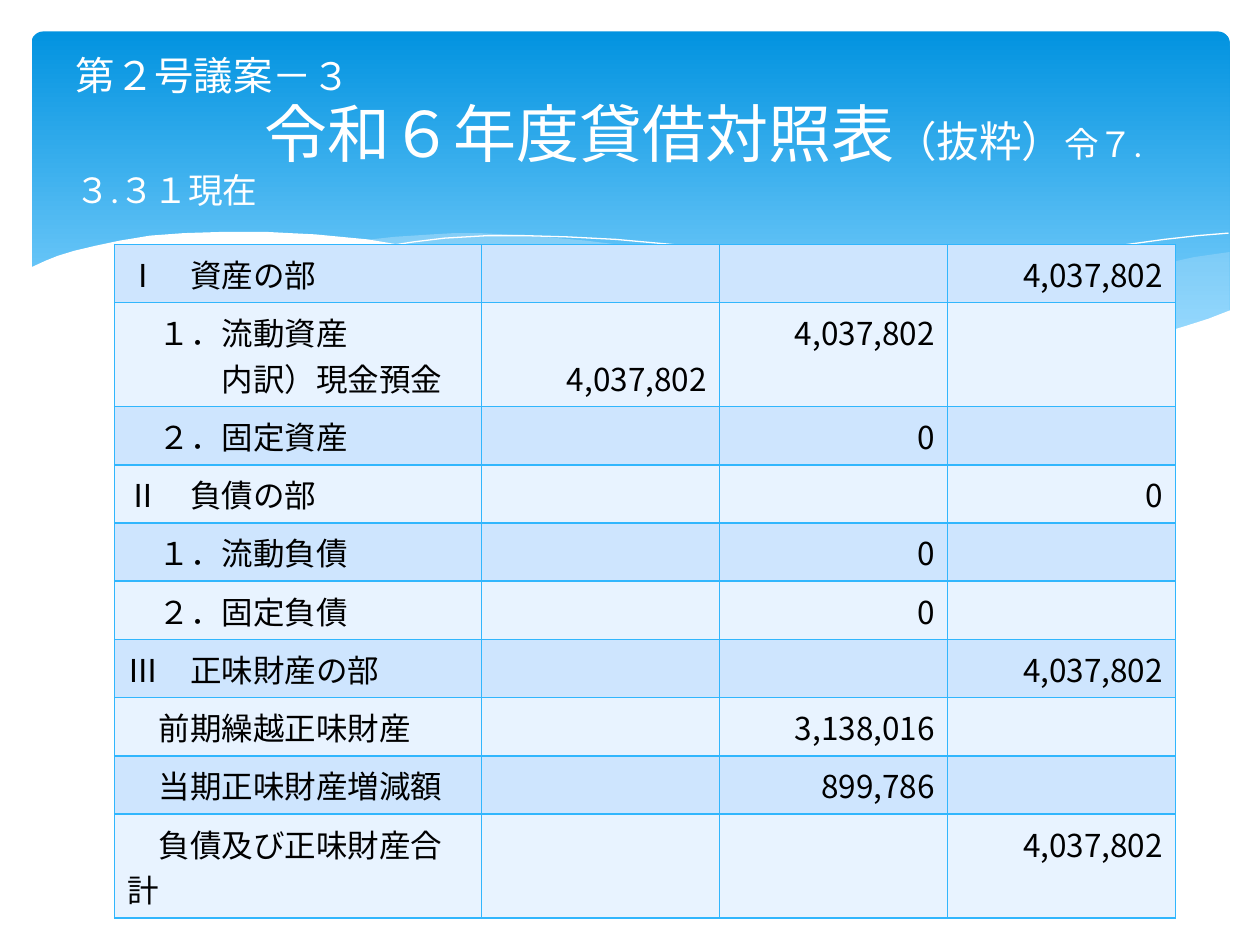
from lxml.etree import SubElement
from pptx import Presentation
from pptx.dml.color import RGBColor
from pptx.enum.shapes import MSO_SHAPE
from pptx.enum.text import MSO_ANCHOR, MSO_AUTO_SIZE, PP_ALIGN
from pptx.oxml.ns import qn
from pptx.util import Inches, Pt

HUES = {"top": "0293E0", "low": "83D3FE", "mist": "C6E7FC", "white": "FFFFFF",
        "black": "000000", "edge": "31B6FD", "odd": "CEE5FE", "even": "E8F3FF"}
CJK = "Noto Sans CJK JP"


def hue(name):
    return RGBColor.from_string(HUES[name])


def write(para, text, size, face, color):
    run = para.add_run()
    run.text = text
    run.font.size = Pt(size)
    run.font.name = face
    run.font.color.rgb = hue(color)
    props = run.font._element
    props.set("lang", "ja-JP")
    SubElement(props, qn("a:ea")).set("typeface", CJK)


deck = Presentation()
deck.slide_width, deck.slide_height = Inches(10), Inches(7.5)
slide = deck.slides.add_slide(deck.slide_layouts[5])
shapes = slide.shapes

# Blue banner
banner = shapes.add_shape(MSO_SHAPE.ROUNDED_RECTANGLE, Inches(0.25), Inches(0.25),
                          Inches(9.51), Inches(2.7))
banner.adjustments[0] = 0.034
banner.shadow.inherit = False
banner.line.fill.background()
banner.fill.gradient()
banner.fill.gradient_angle = 270
for stop, place, name in zip(banner.fill.gradient_stops, (0, 0.9), ("top", "low")):
    stop.position = place
    stop.color.rgb = hue(name)

# Waves: fill, opacity in percent, points in hundredths of an inch
# (no fill means a white hairline)
waves = [
    ("mist", 29, [
        (976, 200), (948, 204), (921, 210), (891, 216), (861, 223), (805, 237),
        (753, 248), (706, 257), (661, 265), (691, 269), (719, 272), (745, 275),
        (781, 277), (814, 278), (844, 277), (872, 274), (897, 270), (921, 265),
        (942, 259), (963, 252), (976, 247)]),
    ("mist", 40, [
        (893, 273), (866, 269), (807, 260), (741, 247), (668, 231), (629, 222),
        (598, 214), (569, 208), (541, 203), (514, 198), (489, 194), (465, 191),
        (442, 189), (420, 187), (399, 186), (380, 185), (361, 185), (344, 186),
        (313, 188), (286, 191), (323, 196), (362, 203), (404, 211), (449, 222),
        (530, 240), (601, 255), (650, 264), (695, 270), (736, 275), (773, 277),
        (807, 278), (838, 278), (867, 276), (893, 273)]),
    (None, 100, [
        (309, 195), (328, 192), (353, 189), (387, 187), (416, 187), (450, 188),
        (489, 190), (533, 194), (582, 200), (636, 208), (695, 219), (760, 233),
        (831, 251), (907, 272)]),
    (None, 100, [
        (613, 257), (653, 246), (695, 235), (748, 223), (806, 210), (836, 204),
        (866, 199), (895, 194), (924, 190), (951, 187), (975, 185)]),
    ("white", 100, [
        (977, 246), (959, 253), (940, 259), (920, 265), (899, 269), (875, 273),
        (850, 275), (823, 277), (793, 276), (761, 275), (726, 272), (688, 268),
        (648, 262), (603, 254), (555, 245), (503, 233), (447, 220), (391, 207),
        (365, 202), (340, 197), (316, 194), (292, 190), (271, 188), (250, 186),
        (230, 185), (211, 184), (177, 184), (146, 185), (119, 187), (95, 191),
        (76, 195), (59, 199), (46, 203), (36, 207), (23, 213), (23, 329),
        (977, 329)]),
]
for fill, alpha, dots in waves:
    pen = shapes.build_freeform(*dots[0], scale=Inches(0.01))
    pen.add_line_segments(dots[1:], close=fill is not None)
    wave = pen.convert_to_shape()
    wave.shadow.inherit = False
    if fill:
        wave.fill.solid()
        wave.fill.fore_color.rgb = hue(fill)
        wave.line.fill.background()
        if alpha < 100:
            tint = wave._element.spPr.find(qn("a:solidFill"))[0]
            SubElement(tint, qn("a:alpha")).set("val", str(alpha * 1000))
    else:
        wave.fill.background()
        wave.line.color.rgb = hue("white")
        wave.line.width = Pt(0)

# Title, brought in front of the banner
title = shapes.title
shapes._spTree.append(title._element)
title.left, title.top = Inches(0.5), Inches(0.37)
title.width, title.height = Inches(9), Inches(1.37)
frame = title.text_frame
frame.word_wrap = True
frame.auto_size = MSO_AUTO_SIZE.NONE
frame.vertical_anchor = MSO_ANCHOR.MIDDLE
lines = [
    (0, [("第２号議案－", 22.5), ("３", 21.6)]),
    (1.5, [("令和６年度貸借対照表", 36), ("（抜粋）", 24.3), ("令７.３.３１現在", 19.8)]),
]
for i, (indent, parts) in enumerate(lines):
    para = frame.add_paragraph() if i else frame.paragraphs[0]
    para.alignment = PP_ALIGN.LEFT
    para.line_spacing = 0.96
    para.space_before = Pt(0)
    para._p.get_or_add_pPr().set("indent", str(Inches(indent)))
    for text, size in parts:
        write(para, text, size, "Calibri", "white")

# Balance sheet: label lines with first-line indent, then three amounts
rows = [
    ([("Ⅰ　資産の部", 0)], "", "", "4,037,802"),
    ([("１．流動資産", 0.25), ("内訳）現金預金", 0.75)], "4,037,802", "4,037,802", ""),
    ([("２．固定資産", 0.25)], "", "0", ""),
    ([("Ⅱ　負債の部", 0)], "", "", "0"),
    ([("１．流動負債", 0.25)], "", "0", ""),
    ([("２．固定負債", 0.25)], "", "0", ""),
    ([("Ⅲ　正味財産の部", 0)], "", "", "4,037,802"),
    ([("前期繰越正味財産", 0.25)], "", "3,138,016", ""),
    ([("当期正味財産増減額", 0.25)], "", "899,786", ""),
    ([("負債及び正味財産合計", 0.25)], "", "", "4,037,802"),
]
table = shapes.add_table(len(rows), 4, Inches(0.91), Inches(1.94),
                         Inches(8.43), Inches(4.61)).table
table.first_row = table.horz_banding = False
for col, width in zip(table.columns, (2.91, 1.89, 1.81, 1.81)):
    col.width = Inches(width)
for r, (label, *sums) in enumerate(rows):
    table.rows[r].height = Inches({1: 0.75, 4: 0.4}.get(r, 0.43))
    for c in range(4):
        cell = table.cell(r, c)
        props = cell._tc.get_or_add_tcPr()
        for side in ("lnL", "lnR", "lnT", "lnB"):
            edge = SubElement(props, qn("a:" + side), w=str(Pt(1)))
            paint = SubElement(edge, qn("a:solidFill"))
            SubElement(paint, qn("a:srgbClr")).set("val", HUES["edge"])
        cell.fill.solid()
        cell.fill.fore_color.rgb = hue("even" if r % 2 else "odd")
        texts = [(sums[c - 1], 0)] if c else label
        for i, (text, indent) in enumerate(texts):
            para = cell.text_frame.add_paragraph() if i else cell.text_frame.paragraphs[0]
            para.font.size = Pt(18)
            para.alignment = PP_ALIGN.RIGHT if c else PP_ALIGN.LEFT
            para._p.get_or_add_pPr().set("indent", str(Inches(indent)))
            if text:
                write(para, text, 18, CJK, "black")
# The breakdown amount stands level with the second label line
table.cell(1, 1).vertical_anchor = MSO_ANCHOR.BOTTOM

deck.save("out.pptx")
